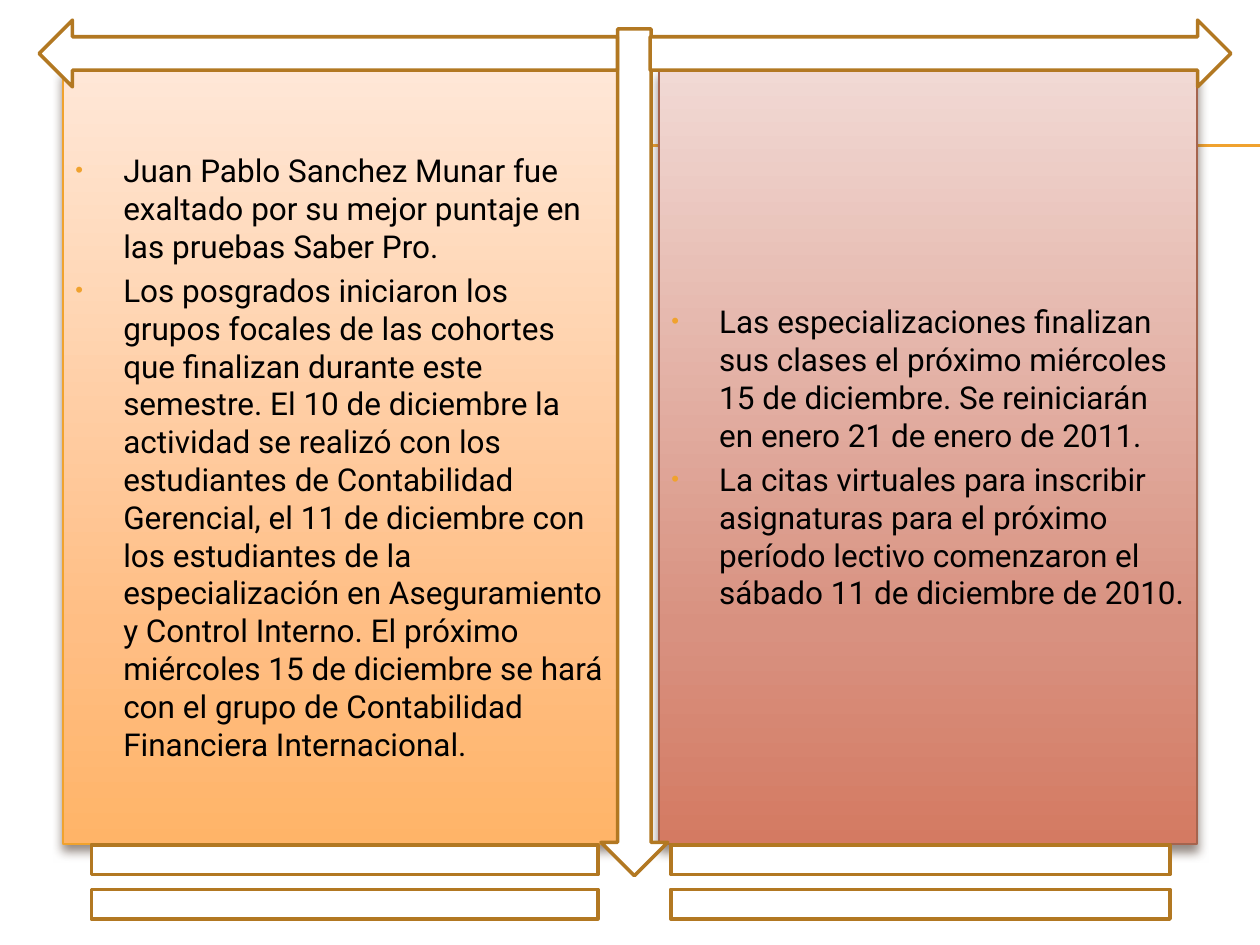
from copy import deepcopy

from lxml.etree import SubElement
from pptx import Presentation
from pptx.dml.color import RGBColor
from pptx.enum.shapes import MSO_CONNECTOR, MSO_SHAPE
from pptx.enum.text import MSO_ANCHOR, PP_ALIGN
from pptx.oxml import parse_xml
from pptx.oxml.ns import nsdecls, qn
from pptx.util import Inches, Pt

GOLD = "F0A22E"
BROWN = "B27822"
STOPS = (0, 0.72, 1)

PANELS = [
    {
        "box": (0.5, 0.55, 4.42, 6.15),
        "fill": ("FFE7D7", "FFBE84", "FFB468"),
        "line": GOLD,
        "text": [
            "Juan Pablo Sanchez Munar fue exaltado por su mejor puntaje en las "
            "pruebas Saber Pro.",
            "Los posgrados iniciaron los grupos focales de las cohortes que "
            "finalizan durante este semestre. El 10 de diciembre la actividad se "
            "realizó con los estudiantes de Contabilidad Gerencial, el 11 de "
            "diciembre con los estudiantes de la especialización en Aseguramiento "
            "y Control Interno. El próximo miércoles 15 de diciembre se hará con "
            "el grupo de Contabilidad Financiera Internacional.",
        ],
    },
    {
        "box": (5.23, 0.55, 4.27, 6.15),
        "fill": ("F1D9D4", "D89180", "D47A62"),
        "line": "A5644E",
        "text": [
            "Las especializaciones finalizan sus clases el próximo miércoles 15 de "
            "diciembre. Se reiniciarán en enero 21 de enero de 2011.",
            "La citas virtuales para inscribir asignaturas para el próximo período "
            "lectivo comenzaron el sábado 11 de diciembre de 2010.",
        ],
    },
]
FRAME = [
    (MSO_SHAPE.DOWN_ARROW, (4.77, 0.23, 0.53, 6.72)),
    (MSO_SHAPE.RIGHT_ARROW, (5.16, 0.16, 4.61, 0.53)),
    (MSO_SHAPE.LEFT_ARROW, (0.31, 0.16, 4.59, 0.53)),
    (MSO_SHAPE.MATH_EQUAL, (0, 6.5, 5.47, 1)),
    (MSO_SHAPE.MATH_EQUAL, (4.61, 6.5, 5.39, 1)),
]


def color(code):
    return RGBColor.from_string(code)


def add_rule(slide, y):
    rule = slide.shapes.add_connector(
        MSO_CONNECTOR.STRAIGHT, Inches(0.56), Inches(y), Inches(10), Inches(y))
    rule.line.color.rgb = color(GOLD)
    rule.line.width = Pt(0.75)
    SubElement(rule.element.spPr, qn("a:effectLst"))


def add_shape(slide, kind, box, line, width):
    shape = slide.shapes.add_shape(kind, *map(Inches, box))
    shape.shadow.inherit = False
    shape.fill.solid()
    shape.fill.fore_color.rgb = color("FFFFFF")
    shape.line.color.rgb = color(line)
    shape.line.width = Pt(width)
    return shape


def shade(shape, codes):
    """Fill from top to bottom with one colour per entry of STOPS."""
    fill = shape.fill
    fill.gradient()
    fill.gradient_angle = 270
    stops = shape.element.spPr.find(qn("a:gradFill")).find(qn("a:gsLst"))
    stops.append(deepcopy(stops[-1]))
    for stop, place, code in zip(fill.gradient_stops, STOPS, codes):
        stop.position = place
        stop.color.rgb = color(code)


def drop_shadow(shape):
    shape.element.spPr.find(qn("a:effectLst")).append(parse_xml(
        f'<a:outerShdw {nsdecls("a")} blurRad="{Pt(6)}" dist="{Pt(4)}" '
        'dir="5400000" rotWithShape="0"><a:srgbClr val="4E3B30">'
        '<a:alpha val="60000"/></a:srgbClr></a:outerShdw>'))


def add_bullet(para, indent=0.38):
    props = para._p.get_or_add_pPr()
    props.set("marL", str(Inches(indent)))
    props.set("indent", str(-Inches(indent)))
    for part in (
        '<a:spcBef {}><a:spcPct val="20000"/></a:spcBef>',
        '<a:buClr {}><a:srgbClr val="' + GOLD + '"/></a:buClr>',
        '<a:buSzPct {} val="70000"/>',
        '<a:buFont {} typeface="Arial"/>',
        '<a:buChar {} char="•"/>',
    ):
        props.append(parse_xml(part.format(nsdecls("a"))))


def write(para, text, size=18, font="Roboto", ink="000000"):
    para.alignment = PP_ALIGN.LEFT
    run = para.add_run()
    run.text = text
    run.font.size = Pt(size)
    run.font.name = font
    run.font.color.rgb = color(ink)


def add_panel(slide, panel):
    shape = add_shape(slide, MSO_SHAPE.RECTANGLE, panel["box"], panel["line"], 0.79)
    shade(shape, panel["fill"])
    drop_shadow(shape)
    frame = shape.text_frame
    frame.word_wrap = True
    frame.vertical_anchor = MSO_ANCHOR.MIDDLE
    for i, text in enumerate(panel["text"]):
        para = frame.add_paragraph() if i else frame.paragraphs[0]
        add_bullet(para)
        write(para, text)


def main():
    deck = Presentation()
    deck.slide_width, deck.slide_height = Inches(10), Inches(7.5)
    slide = deck.slides.add_slide(deck.slide_layouts[6])
    for y in (1.15, 1.16):
        add_rule(slide, y)
    for panel in PANELS:
        add_panel(slide, panel)
    for kind, box in FRAME:
        add_shape(slide, kind, box, BROWN, 2)
    deck.save("out.pptx")


if __name__ == "__main__":
    main()
